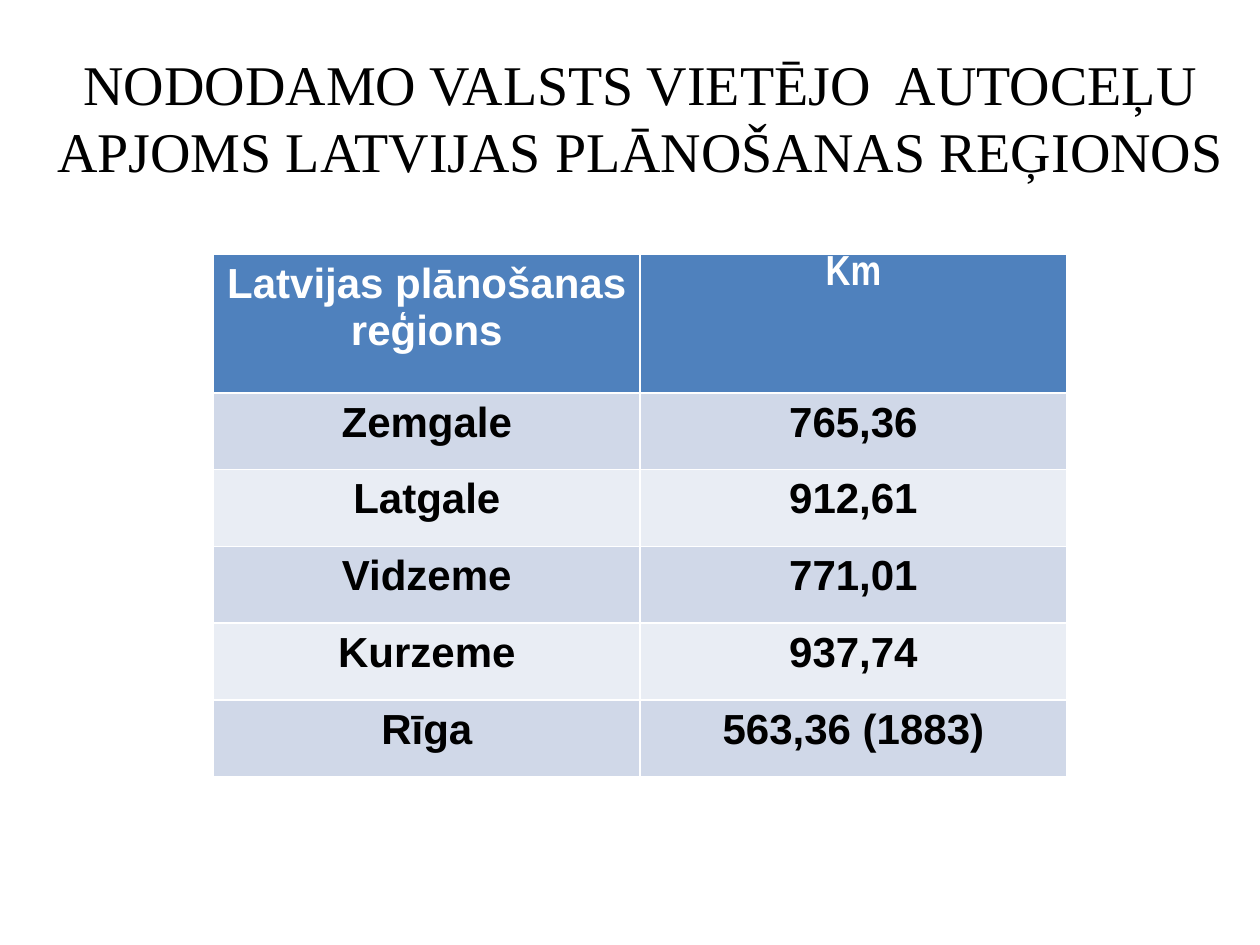
"""Build a slide with a table of local road lengths by Latvian planning region."""
from pptx import Presentation
from pptx.dml.color import RGBColor
from pptx.enum import text
from pptx.util import Pt


def paint(target, colour):
    target.solid()
    target.fore_color.rgb = RGBColor.from_string(colour)


def style(paragraph, font_name, size, bold, colour):
    paragraph.alignment = text.PP_ALIGN.CENTER
    paragraph.font.name = font_name
    paragraph.font.size = Pt(size)
    paragraph.font.bold = bold
    paint(paragraph.font.fill, colour)


deck = Presentation()
deck.slide_width, deck.slide_height = Pt(720), Pt(540)
page = deck.slides.add_slide(deck.slide_layouts[5])

title = page.shapes.title
title.left, title.top, title.width, title.height = Pt(20), Pt(21.6), Pt(692), Pt(90)
title.text_frame.text = "NODODAMO VALSTS VIETĒJO  AUTOCEĻU APJOMS LATVIJAS PLĀNOŠANAS REĢIONOS"
title.text_frame.vertical_anchor = text.MSO_ANCHOR.MIDDLE
style(title.text_frame.paragraphs[0], "Times New Roman", 32, False, "000000")

rows = [
    ("Latvijas plānošanas\nreģions", "Km"),
    ("Zemgale", "765,36"),
    ("Latgale", "912,61"),
    ("Vidzeme", "771,01"),
    ("Kurzeme", "937,74"),
    ("Rīga", "563,36 (1883)"),
]
header_height, row_height = 79, 43.9
table_height = header_height + row_height * (len(rows) - 1)
table = page.shapes.add_table(
    len(rows), 2, Pt(122), Pt(145.5), Pt(487.6), Pt(table_height)
).table

for row_index, values in enumerate(rows):
    is_header = row_index == 0
    table.rows[row_index].height = Pt(header_height if is_header else row_height)
    fill = "4F81BD" if is_header else ("E9EDF4", "D0D8E8")[row_index % 2]
    for column_index, value in enumerate(values):
        cell = table.cell(row_index, column_index)
        paint(cell.fill, fill)
        cell.text = value
        for paragraph in cell.text_frame.paragraphs:
            font_name = "Arial Narrow" if value == "Km" else "Arial"
            style(paragraph, font_name, 24, True, "FFFFFF" if is_header else "000000")

table.cell(0, 1).margin_top = Pt(0)

deck.save("out.pptx")
